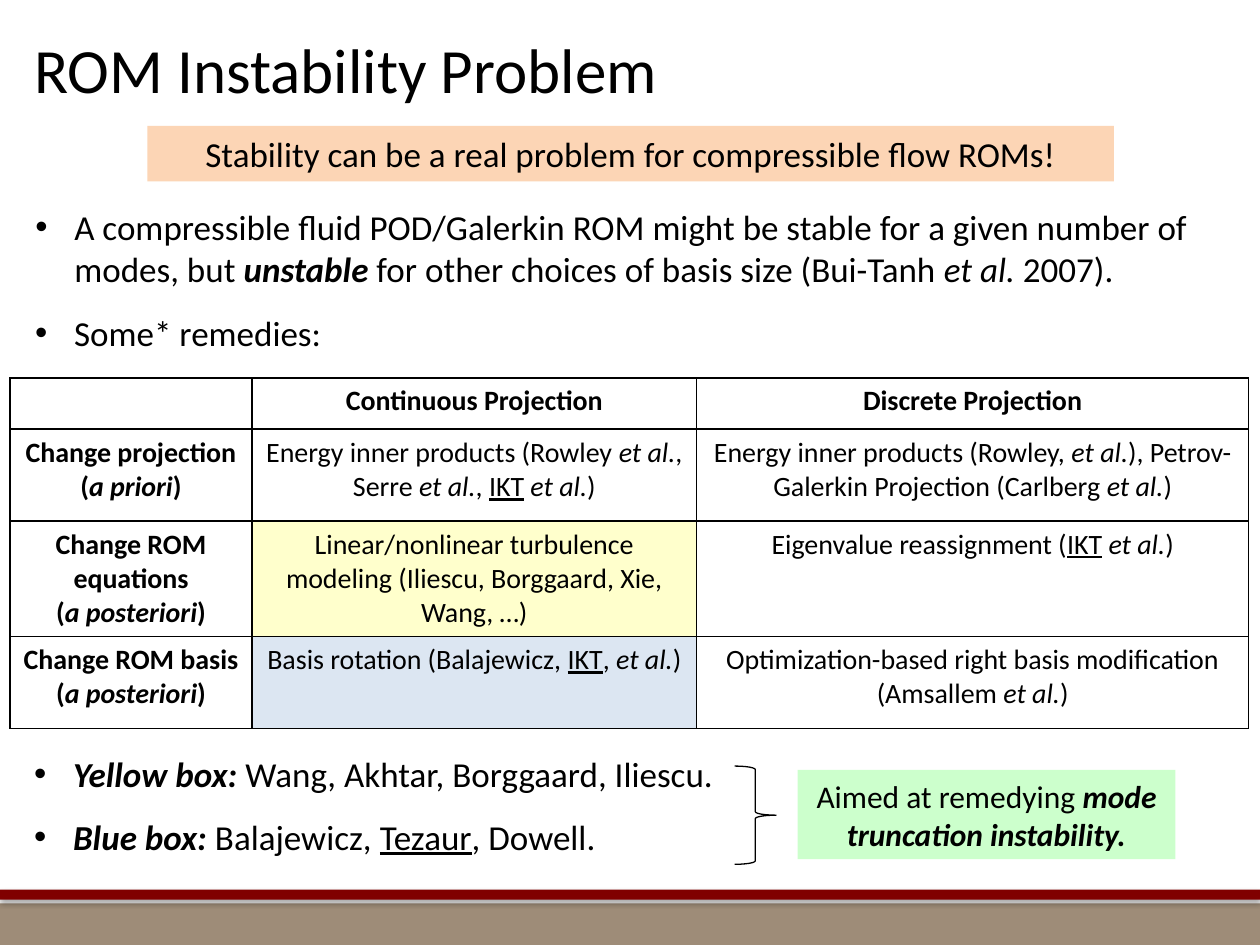
import pptx
import pptx.dml.color
import pptx.enum.shapes
import pptx.enum.text
import pptx.oxml.ns
import pptx.util
from lxml import etree

RGB = pptx.dml.color.RGBColor
BLACK = RGB(0, 0, 0)
WHITE = RGB(255, 255, 255)
TAN = RGB(0x9E, 0x8C, 0x78)
MAROON = RGB(0x80, 0, 0)
PEACH = RGB(0xFC, 0xD5, 0xB5)
YELLOW = RGB(0xFF, 0xFF, 0xCC)
BLUE = RGB(0xDC, 0xE6, 0xF2)
GREEN = RGB(0xCC, 0xFF, 0xCC)

Inches = pptx.util.Inches
Pt = pptx.util.Pt
KIND = pptx.enum.shapes.MSO_SHAPE
ALIGN = pptx.enum.text.PP_ALIGN
ANCHOR = pptx.enum.text.MSO_ANCHOR
FIT = pptx.enum.text.MSO_AUTO_SIZE
STYLES = {"b": "bold", "i": "italic", "u": "underline"}

ETAL = ("et al.", "i")
IKT = ("IKT", "u")
END = (")", "")
PRIOR = [("(", "b"), ("a priori", "bi"), (")", "b")]
POST = [("(", "b"), ("a posteriori", "bi"), (")", "b")]

WIDTHS = [1.92, 3.53, 4.38]
HEIGHTS = [0.37, 0.73, 0.89, 0.73]
FILLS = {(2, 1): YELLOW, (3, 1): BLUE}
ROWS = [
    [[],
     [[("Continuous Projection", "b")]],
     [[("Discrete Projection", "b")]]],
    [[[("Change projection", "b")], PRIOR],
     [[("Energy inner products (Rowley ", ""), ETAL, (", Serre ", ""), ETAL,
       (", ", ""), IKT, (" ", ""), ETAL, END]],
     [[("Energy inner products (Rowley, ", ""), ETAL,
       ("), Petrov-Galerkin Projection (Carlberg ", ""), ETAL, END]]],
    [[[("Change ROM equations", "b")], POST],
     [[("Linear/nonlinear turbulence modeling (Iliescu, Borggaard, Xie, Wang, …)", "")]],
     [[("Eigenvalue reassignment (", ""), IKT, (" ", ""), ETAL, END]]],
    [[[("Change ROM basis", "b")], POST],
     [[("Basis rotation (Balajewicz, ", ""), IKT, (", ", ""), ETAL, END]],
     [[("Optimization-based right basis modification (Amsallem ", ""), ETAL, END]]],
]


def assign(item, values):
    for name, value in values.items():
        setattr(item, name, value)


def node(parent, tag, **values):
    return etree.SubElement(parent, pptx.oxml.ns.qn(tag), values)


def place(shape, spot):
    names = ("left", "top", "width", "height")
    assign(shape, dict(zip(names, map(Inches, spot))))


def write(frame, paras, size, align=ALIGN.LEFT, bullet=False):
    for num, runs in enumerate(paras):
        para = frame.paragraphs[0] if num == 0 else frame.add_paragraph()
        if bullet:
            props = para._p.get_or_add_pPr()
            props.set("marL", str(Inches(0.31)))
            props.set("indent", str(Inches(-0.31)))
            node(props, "a:buFont", typeface="Arial")
            node(props, "a:buChar", char="•")
        gap = Pt(12 if bullet and num else 0)
        assign(para, {"alignment": align, "space_before": gap})
        for text, marks in runs:
            run = para.add_run()
            run.text = text
            look = {"name": "Calibri", "size": Pt(size)}
            look.update({name: mark in marks for mark, name in STYLES.items()})
            assign(run.font, look)
            run.font.color.rgb = BLACK


def fill_text(shape, spot, paras, size, anchor=ANCHOR.TOP, bullet=False):
    place(shape, spot)
    frame = shape.text_frame
    assign(frame, {"word_wrap": True, "auto_size": FIT.NONE, "vertical_anchor": anchor})
    write(frame, paras, size, bullet=bullet)


def add_box(slide, spot, color):
    box = slide.shapes.add_shape(KIND.RECTANGLE, *map(Inches, spot))
    box.shadow.inherit = False
    box.fill.solid()
    box.fill.fore_color.rgb = color
    box.line.fill.background()
    return box


def add_bar(slide, spot, color):
    bar = add_box(slide, spot, color)
    effects = bar._element.spPr.find(pptx.oxml.ns.qn("a:effectLst"))
    shade = node(effects, "a:outerShdw", blurRad=str(Pt(3.1)), dist=str(Pt(1.8)),
                 dir="5400000", rotWithShape="0")
    tint = node(shade, "a:srgbClr", val="000000")
    node(tint, "a:alpha", val="35000")


def add_note(slide, spot, color, runs, size):
    frame = add_box(slide, spot, color).text_frame
    frame.word_wrap = True
    write(frame, [runs], size, ALIGN.CENTER)


def add_brace(slide, spot):
    brace = slide.shapes.add_shape(KIND.RIGHT_BRACE, *map(Inches, spot))
    brace.shadow.inherit = False
    brace.fill.background()
    brace.line.color.rgb = BLACK
    brace.line.width = Pt(0.75)


def frame_cell(cell):
    props = cell._tc.get_or_add_tcPr()
    for side in "LRTB":
        line = node(props, "a:ln" + side, w=str(Pt(1)))
        node(node(line, "a:solidFill"), "a:srgbClr", val=str(BLACK))


def add_grid(slide, left, top):
    spot = (left, top, sum(WIDTHS), sum(HEIGHTS))
    table = slide.shapes.add_table(len(ROWS), len(WIDTHS), *map(Inches, spot)).table
    assign(table, {"first_row": False, "horz_banding": False})
    for col, width in zip(table.columns, WIDTHS):
        col.width = Inches(width)
    for y, (row, height) in enumerate(zip(ROWS, HEIGHTS)):
        table.rows[y].height = Inches(height)
        for x, paras in enumerate(row):
            cell = table.cell(y, x)
            frame_cell(cell)
            cell.fill.solid()
            cell.fill.fore_color.rgb = FILLS.get((y, x), WHITE)
            write(cell.text_frame, paras, 16, ALIGN.CENTER)


def main():
    deck = pptx.Presentation()
    assign(deck, {"slide_width": Inches(10), "slide_height": Inches(7.5)})
    slide = deck.slides.add_slide(deck.slide_layouts[3])
    title, claim, teams = slide.placeholders

    add_bar(slide, (0, 7.17, 10, 0.33), TAN)
    add_bar(slide, (0, 7.06, 10, 0.08), MAROON)
    fill_text(title, (0.17, 0, 9, 1.08), [[("ROM Instability Problem", "")]],
              36, ANCHOR.MIDDLE)
    fill_text(claim, (0.18, 1.58, 9.48, 0.78), [
        [("A compressible fluid POD/Galerkin ROM might be stable for a given "
          "number of modes, but ", ""), ("unstable", "bi"),
         (" for other choices of basis size (Bui-Tanh ", ""),
         ("et al. ", "i"), ("2007).", "")],
    ], 20, bullet=True)
    add_note(slide, (1.17, 1, 7.67, 0.44), PEACH,
             [("Stability can be a real problem for compressible flow ROMs!", "")], 20)
    spot = (0.18, 2.42, 9.48, 0.5)
    lead = slide.shapes.add_textbox(*map(Inches, spot))
    fill_text(lead, spot, [[("Some* remedies:", "")]], 20, bullet=True)
    add_grid(slide, 0.08, 3)
    fill_text(teams, (0.17, 5.92, 8.65, 0.94), [
        [("Yellow box: ", "bi"), ("Wang, Akhtar, Borggaard, Iliescu.", "")],
        [("Blue box: ", "bi"), ("Balajewicz, ", ""), ("Tezaur", "u"), (", Dowell.", "")],
    ], 20, bullet=True)
    add_brace(slide, (5.83, 6.08, 0.33, 0.78))
    add_note(slide, (6.33, 6.11, 3, 0.71), GREEN,
             [("Aimed at remedying ", ""), ("mode truncation instability.", "bi")], 18)
    deck.save("out.pptx")


if __name__ == "__main__":
    main()
